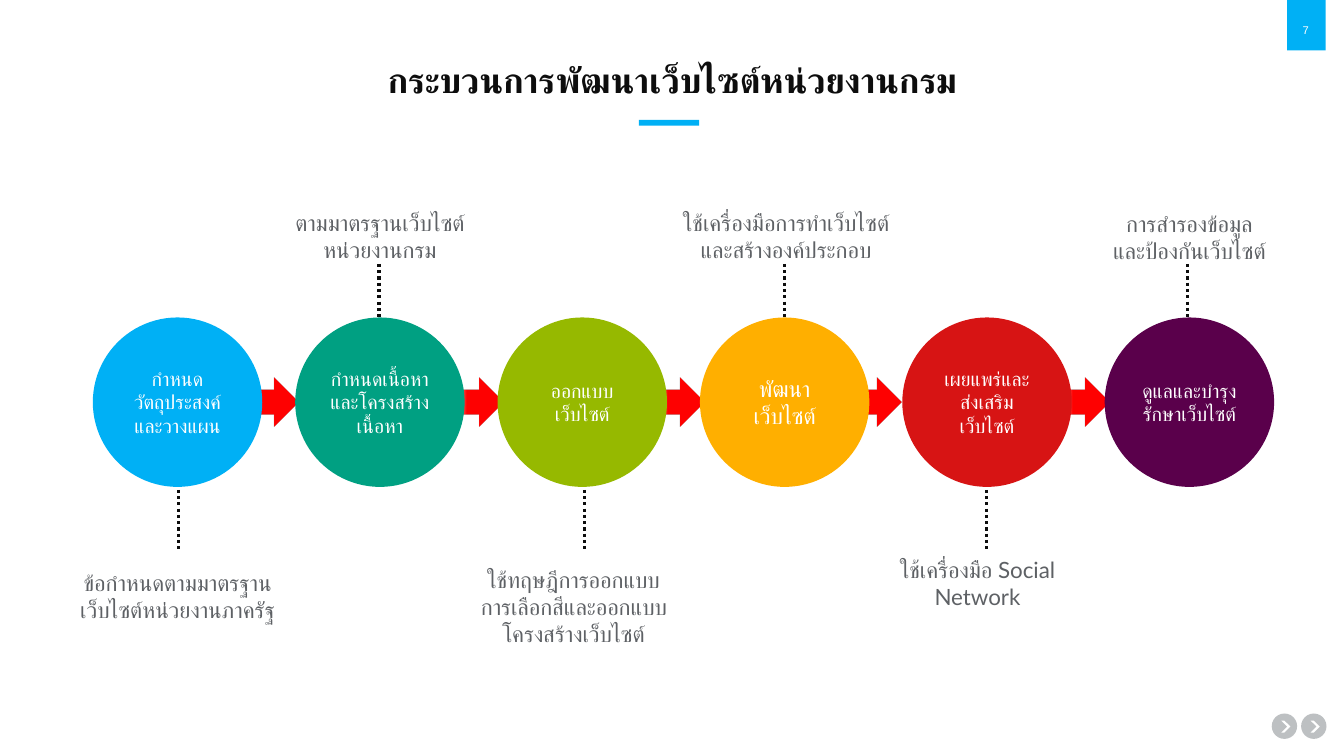
from lxml import etree
from pptx import Presentation
from pptx.dml.color import RGBColor
from pptx.enum.dml import MSO_LINE
from pptx.enum.shapes import MSO_CONNECTOR, MSO_SHAPE
from pptx.enum.text import MSO_ANCHOR, PP_ALIGN
from pptx.oxml.ns import qn
from pptx.util import Cm, Pt

RECT, OVAL = MSO_SHAPE.RECTANGLE, MSO_SHAPE.OVAL
CHEVRON, ARROW = MSO_SHAPE.CHEVRON, MSO_SHAPE.RIGHT_ARROW
STRAIGHT, DOTTED = MSO_CONNECTOR.STRAIGHT, MSO_LINE.ROUND_DOT
MIDDLE, CENTER = MSO_ANCHOR.MIDDLE, PP_ALIGN.CENTER

COLORS = {
    "blue": "00B0F5", "teal": "00A082", "lime": "96B900", "amber": "FFAF00",
    "crimson": "D71414", "plum": "5A004B", "red": "FF0000", "pale": "F2FBFF",
    "ink": "0D0D0D", "text": "5E6165", "grey": "7D8287", "white": "FFFFFF",
    "page": "FEFEFE",
}

TITLE = "กระบวนการพัฒนาเว็บไซต์หน่วยงานกรม"
# label, colour, label size, dotted line x, note box (cm), note paragraphs
STEPS = [
    ("กำหนดวัตถุประสงค์และวางแผน", "blue", 14, 4.5,
     (1.73, 13.87, 5.49, 2.31), ["ข้อกำหนดตามมาตรฐานเว็บไซต์หน่วยงานภาครัฐ"]),
    ("กำหนดเนื้อหาและโครงสร้างเนื้อหา", "teal", 14, 9.55,
     (6.83, 5.13, 5.49, 1.63), ["ตามมาตรฐานเว็บไซต์หน่วยงานกรม"]),
    ("ออกแบบเว็บไซต์", "lime", 14, 14.73,
     (11.71, 13.79, 5.49, 3), ["ใช้ทฤษฎีการออกแบบ", "การเลือกสีและออกแบบโครงสร้างเว็บไซต์"]),
    ("พัฒนาเว็บไซต์", "amber", 16, 19.76,
     (16.66, 5.13, 6.3, 1.63), ["ใช้เครื่องมือการทำเว็บไซต์และสร้างองค์ประกอบ"]),
    ("เผยแพร่และส่งเสริมเว็บไซต์", "crimson", 14, 24.87,
     (21.89, 13.87, 5.49, 1.63), ["ใช้เครื่องมือ Social Network"]),
    ("ดูแลและบำรุงรักษาเว็บไซต์", "plum", 14, 29.92,
     (27.23, 5.16, 5.49, 1.63), ["การสำรองข้อมูล\vและป้องกันเว็บไซต์"]),
]
ARROW_LEFTS = [5.88, 11.06, 16.12, 21.09, 26.33]
CIRCLE_LEFT, CIRCLE_TOP, CIRCLE_SIZE, CIRCLE_PITCH = 2.34, 8, 4.27, 5.1


def rgb(name):
    return RGBColor.from_string(COLORS[name])


def set_alpha(fill_parent, percent):
    """Make the first colour found under an element partly transparent."""
    color = next(fill_parent.iter(qn("a:srgbClr")))
    etree.SubElement(color, qn("a:alpha")).set("val", str(percent * 1000))


class Deck:
    """Holds the text font and the slide that elements are added to."""

    def __init__(self, font="Lato"):
        self.font = font
        self.prs = Presentation()
        self.prs.slide_width, self.prs.slide_height = Cm(33.87), Cm(19.05)
        self.s = self.prs.slides.add_slide(self.prs.slide_layouts[5])

    def fill_text(self, tf, paragraphs, size, color, font=None, bold=False, spacing=None):
        font = font or self.font
        tf.word_wrap = True
        tf.vertical_anchor = MIDDLE
        for i, text in enumerate(paragraphs):
            p = tf.add_paragraph() if i else tf.paragraphs[0]
            p.text = text
            p.alignment = CENTER
            p.line_spacing = spacing
            p.font.size, p.font.bold, p.font.name = Pt(size), bold, font
            p.font.color.rgb = rgb(color)
            props = p._p.pPr.find(qn("a:defRPr"))
            etree.SubElement(props, qn("a:cs")).set("typeface", font)

    def title(self, text, box):
        sp = self.s.shapes.title
        sp.left, sp.top, sp.width, sp.height = map(Cm, box)
        self.fill_text(sp.text_frame, [text], 25, "ink", bold=True, spacing=0.9)

    def text(self, box, paragraphs, size, color, font=None):
        sp = self.s.shapes.add_textbox(*map(Cm, box))
        self.fill_text(sp.text_frame, paragraphs, size, color, font)

    def shape(self, kind, box, color, alpha=None):
        sp = self.s.shapes.add_shape(kind, *map(Cm, box))
        sp.shadow.inherit = False
        sp.line.fill.background()
        sp.fill.solid()
        sp.fill.fore_color.rgb = rgb(color)
        if alpha is not None:
            set_alpha(sp._element.spPr, alpha)
        return sp

    def arrow(self, box):
        """Add a right arrow that fades in from its tail."""
        sp = self.shape(ARROW, box, "red")
        sp.fill.gradient()
        sp.fill.gradient_angle = 0
        for stop, position, color in zip(sp.fill.gradient_stops, (0, 0.44), ("pale", "red")):
            stop.position = position
            stop.color.rgb = rgb(color)
        set_alpha(sp._element.spPr, 0)

    def dotted_line(self, x, top, bottom):
        line = self.s.shapes.add_connector(STRAIGHT, Cm(x), Cm(top), Cm(x), Cm(bottom))
        line.line.color.rgb = rgb("ink")
        line.line.width = Pt(2.25)
        line.line.dash_style = DOTTED
        etree.SubElement(line._element.spPr, qn("a:effectLst"))

    def next_button(self, left):
        self.shape(OVAL, (left, 17.98, 0.64, 0.64), "grey", 50)
        sp = self.shape(CHEVRON, (left + 0.24, 18.16, 0.23, 0.3), "white")
        sp.adjustments[0] = 0.66


def main():
    deck = Deck()
    deck.title(TITLE, (2.34, 1.37, 29.21, 1.4))
    deck.shape(RECT, (16.1, 3.02, 1.52, 0.15), "blue")
    deck.shape(RECT, (32.44, -0.08, 0.97, 1.35), "blue")
    deck.text((32.31, 0.48, 1.19, 0.53), ["7"], 8, "page", "Arial")
    for left in (32.05, 32.79):
        deck.next_button(left)

    for left in ARROW_LEFTS:
        deck.arrow((left, 9.51, 1.63, 1.24))
    for i, (label, color, size, line_x, note_box, note) in enumerate(STEPS):
        top, bottom = (6.65, 8.81) if i % 2 else (11.71, 13.87)
        deck.dotted_line(line_x, top, bottom)
        left = CIRCLE_LEFT + i * CIRCLE_PITCH
        circle = deck.shape(OVAL, (left, CIRCLE_TOP, CIRCLE_SIZE, CIRCLE_SIZE), color)
        deck.fill_text(circle.text_frame, [label], size, "white")
        deck.text(note_box, note, 16, "text")

    deck.prs.save("out.pptx")


if __name__ == "__main__":
    main()
